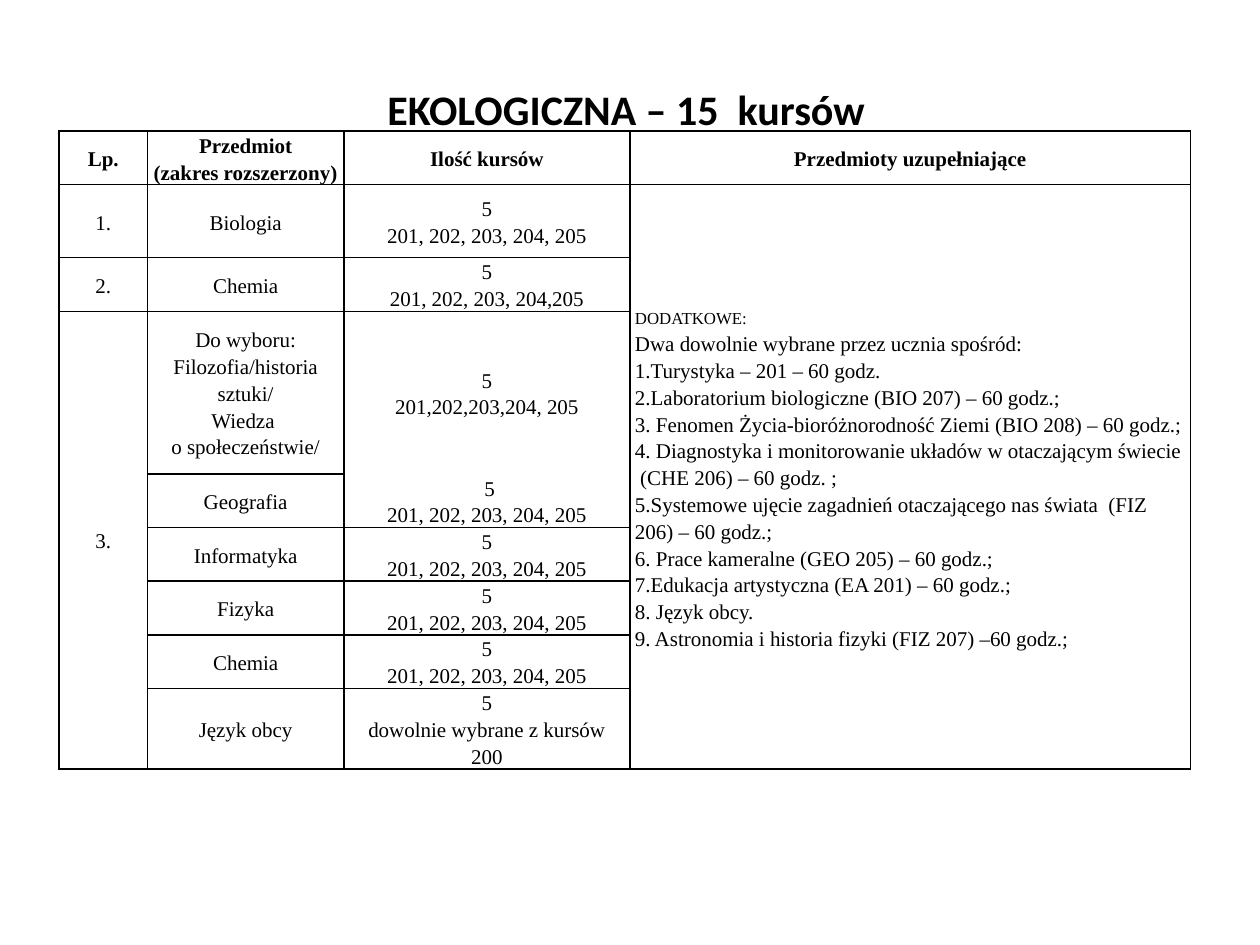
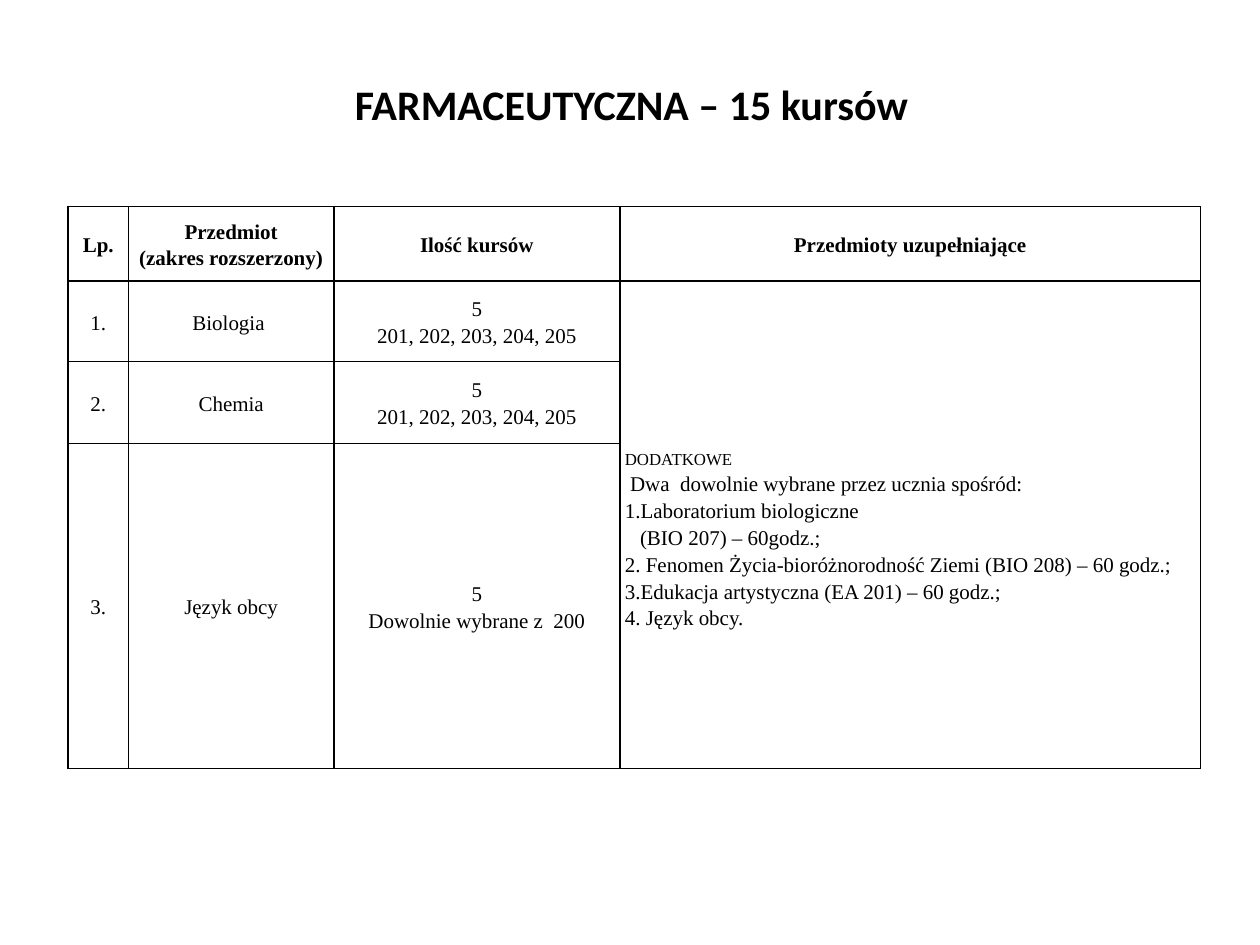
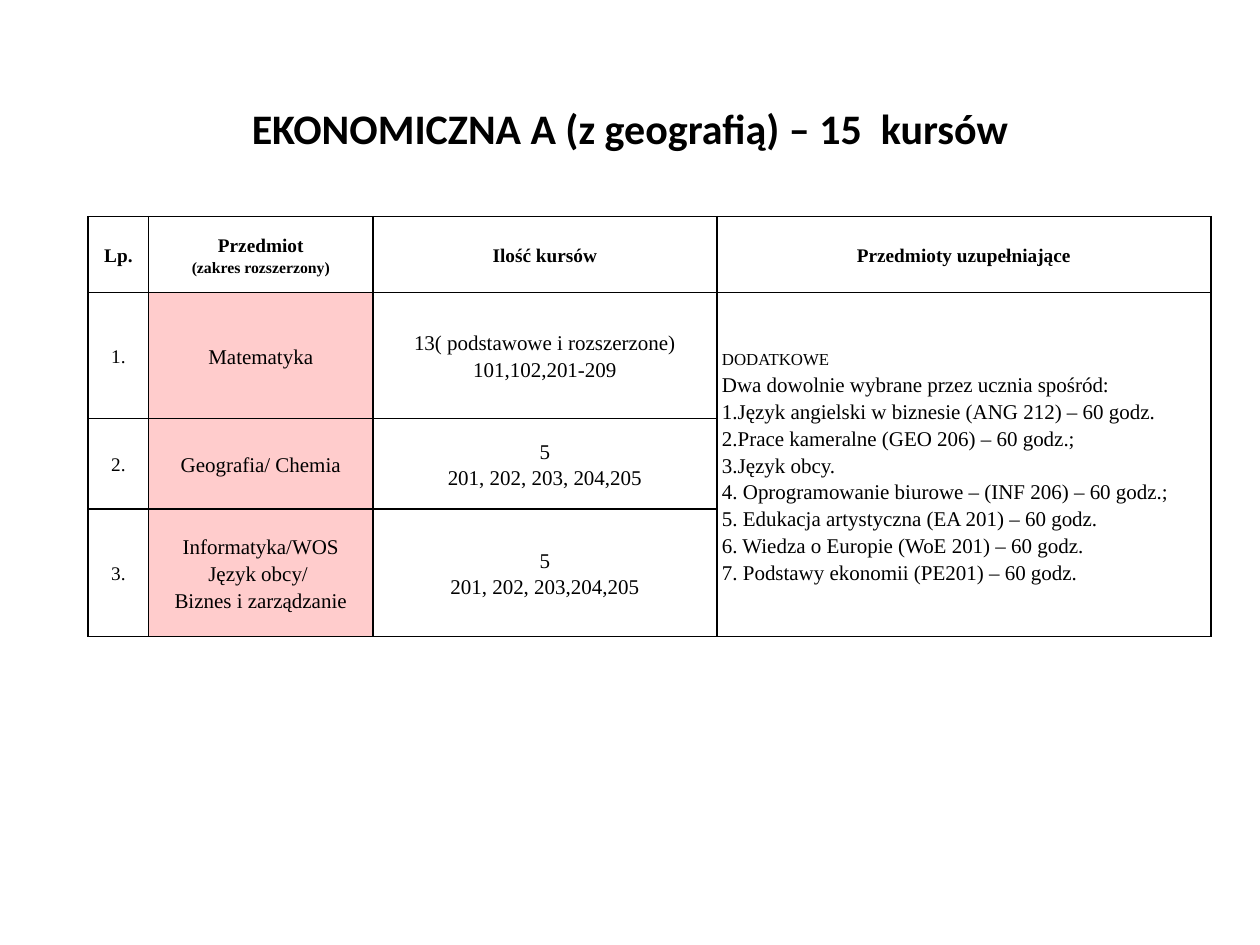
from lxml import etree
from pptx import Presentation
from pptx import util as u
from pptx.dml.color import RGBColor
from pptx.enum import text
from pptx.oxml import ns

BLACK = RGBColor(0, 0, 0)
PINK = RGBColor(0xFF, 0xCC, 0xCC)
HEAD = ["Lp.", "Przedmiot\n(zakres rozszerzony)", "Ilość kursów", "Przedmioty uzupełniające"]
FULL = "5\n201, 202, 203, 204, 205"
LAST = 3
CENTER, LEFT = text.PP_ALIGN.CENTER, text.PP_ALIGN.LEFT
LOOSE, TIGHT = 1.15, u.Pt(15.3)


class Deck:
    """Holds the style of the course tables and the current slide."""

    def __init__(self):
        self.prs = Presentation()
        self.prs.slide_width, self.prs.slide_height = u.Inches(10), u.Inches(7.5)

    def page(self):
        self.slide = self.prs.slides.add_slide(self.prs.slide_layouts[6])

    def run(self, para, words, size, bold, font="Times New Roman"):
        run = para.add_run()
        run.text = words
        run.font.name, run.font.size, run.font.bold = font, u.Pt(size), bold
        run.font.color.rgb = BLACK
        return run

    def title(self, words, left, top, height):
        box = self.slide.shapes.add_textbox(*map(u.Inches, (left, top, 9, height)))
        frame = box.text_frame
        frame.word_wrap = True
        frame.vertical_anchor = text.MSO_ANCHOR.MIDDLE
        para = frame.paragraphs[0]
        para.alignment = CENTER
        self.run(para, words, 24, True, "Calibri")

    def edges(self, cell, sides):
        props = cell._tc.get_or_add_tcPr()
        for side in "LRTB":
            line = etree.SubElement(props, ns.qn(f"a:ln{side}"), w=str(u.Pt(1)))
            if side in sides:
                fill = etree.SubElement(line, ns.qn("a:solidFill"))
                etree.SubElement(fill, ns.qn("a:srgbClr"), val=str(BLACK))
            else:
                etree.SubElement(line, ns.qn("a:noFill"))

    def fill(self, cell, words, size, bold, align, small, pitch):
        cell.vertical_anchor = text.MSO_ANCHOR.MIDDLE
        for i, line in enumerate(words.split("\n")):
            para = cell.text_frame.paragraphs[0] if i == 0 else cell.text_frame.add_paragraph()
            para.alignment, para.line_spacing = align, pitch
            if line.startswith("(BIO"):
                para._p.get_or_add_pPr().set("marL", str(u.Inches(0.12)))
            run = self.run(para, line, small if line.startswith("(zakres") else size, bold)
            if line.startswith("dodatkowe"):
                run._r.get_or_add_rPr().set("cap", "small")

    def table(self, left, top, cols, highs, rows, spans, size=12, small=12, tint=None,
              open_at=None, drop=0, pitch=LOOSE):
        rows = [HEAD] + rows
        shape = self.slide.shapes.add_table(
            len(rows), len(cols), *map(u.Inches, (left, top, sum(cols), sum(highs))))
        grid = shape.table
        grid.first_row = grid.horz_banding = False
        for col, wide in zip(grid.columns, cols):
            col.width = u.Inches(wide)
        for row, high in zip(grid.rows, highs):
            row.height = u.Inches(high)
        for col, start in spans:
            grid.cell(start, col).merge(grid.cell(len(rows) - 1, col))
        for r, row in enumerate(rows):
            for c, words in enumerate(row):
                cell = grid.cell(r, c)
                cell.margin_left = cell.margin_right = u.Inches(0.04)
                cell.margin_top = cell.margin_bottom = 0
                sides = "LRTB"
                if words is None:
                    sides = "LRB" if r == len(rows) - 1 else "LR"
                elif (r, c) == open_at:
                    sides = "LRT"
                elif open_at and (r - 1, c) == open_at:
                    sides = "LRB"
                self.edges(cell, sides)
                if tint and r and c == 1:
                    cell.fill.solid()
                    cell.fill.fore_color.rgb = tint
                else:
                    cell.fill.background()
                if words is None:
                    continue
                extra = r > 0 and c == LAST
                if extra:
                    cell.margin_top = u.Inches(drop)
                self.fill(cell, words, size if r == 0 or c == 0 else 12, r == 0,
                          LEFT if extra else CENTER, small, LOOSE if extra else pitch)


def main():
    deck = Deck()

    deck.page()
    deck.title("EKOLOGICZNA – 15  kursów", 0.47, 0.39, 0.95)
    extras = """dodatkowe:
Dwa dowolnie wybrane przez ucznia spośród:
1.Turystyka – 201 – 60 godz.
2.Laboratorium biologiczne (BIO 207) – 60 godz.;
3. Fenomen Życia-bioróżnorodność Ziemi (BIO 208) – 60 godz.;
4. Diagnostyka i monitorowanie układów w otaczającym świecie  (CHE 206) – 60 godz. ;
5.Systemowe ujęcie zagadnień otaczającego nas świata  (FIZ 206) – 60 godz.;
6. Prace kameralne (GEO 205) – 60 godz.;
7.Edukacja artystyczna (EA 201) – 60 godz.;
8. Język obcy.
9. Astronomia i historia fizyki (FIZ 207) –60 godz.;"""
    choice = "Do wyboru:\nFilozofia/historia sztuki/\nWiedza \no społeczeństwie/"
    deck.table(0.47, 1.04, [0.7, 1.56, 2.27, 4.45],
               [0.42, 0.58, 0.42, 1.29] + [0.42] * 4 + [0.64], [
        ["1.", "Biologia", FULL, extras],
        ["2.", "Chemia", "5\n201, 202, 203, 204,205", None],
        ["3.", choice, "5\n201,202,203,204, 205", None],
        [None, "Geografia", " " + FULL, None],
        [None, "Informatyka", FULL, None],
        [None, "Fizyka", FULL, None],
        [None, "Chemia", FULL, None],
        [None, "Język obcy", "5\ndowolnie wybrane z kursów\n200", None],
    ], [(LAST, 1), (0, 3)], open_at=(3, 2), pitch=TIGHT)

    deck.page()
    deck.title("FARMACEUTYCZNA – 15 kursów ", 0.55, 0.31, 1.03)
    extras = """dodatkowe
 Dwa  dowolnie wybrane przez ucznia spośród:
1.Laboratorium biologiczne
(BIO 207) – 60godz.;
2. Fenomen Życia-bioróżnorodność Ziemi (BIO 208) – 60 godz.;
3.Edukacja artystyczna (EA 201) – 60 godz.;
4. Język obcy."""
    deck.table(0.54, 1.64, [0.48, 1.63, 2.27, 4.61], [0.59, 0.64, 0.65, 2.58], [
        ["1.", "Biologia ", FULL, extras],
        ["2.", "Chemia", FULL, None],
        ["3.", "Język obcy", "5\nDowolnie wybrane z  200", None],
    ], [(LAST, 1)], drop=0.19)

    deck.page()
    deck.title("EKONOMICZNA A (z geografią) – 15  kursów", 0.5, 0.7, 0.62)
    extras = """dodatkowe
Dwa dowolnie wybrane przez ucznia spośród:
1.Język angielski w biznesie (ANG 212) – 60 godz.
2.Prace kameralne (GEO 206) – 60 godz.;
3.Język obcy.
4. Oprogramowanie biurowe – (INF 206) – 60 godz.;
5. Edukacja artystyczna (EA 201) – 60 godz.
6. Wiedza o Europie (WoE 201) – 60 godz. 
7. Podstawy ekonomii (PE201) – 60 godz."""
    deck.table(0.7, 1.72, [0.48, 1.78, 2.73, 3.92], [0.6, 1, 0.72, 1.01], [
        ["1.", "Matematyka", "13( podstawowe i rozszerzone)\n101,102,201-209", extras],
        ["2.", "Geografia/ Chemia", "5\n201, 202, 203, 204,205", None],
        ["3.", "Informatyka/WOS\nJęzyk obcy/ \nBiznes i zarządzanie",
         "5\n201, 202, 203,204,205", None],
    ], [(LAST, 1)], size=11, small=9, tint=PINK)

    deck.prs.save("out.pptx")


if __name__ == "__main__":
    main()
